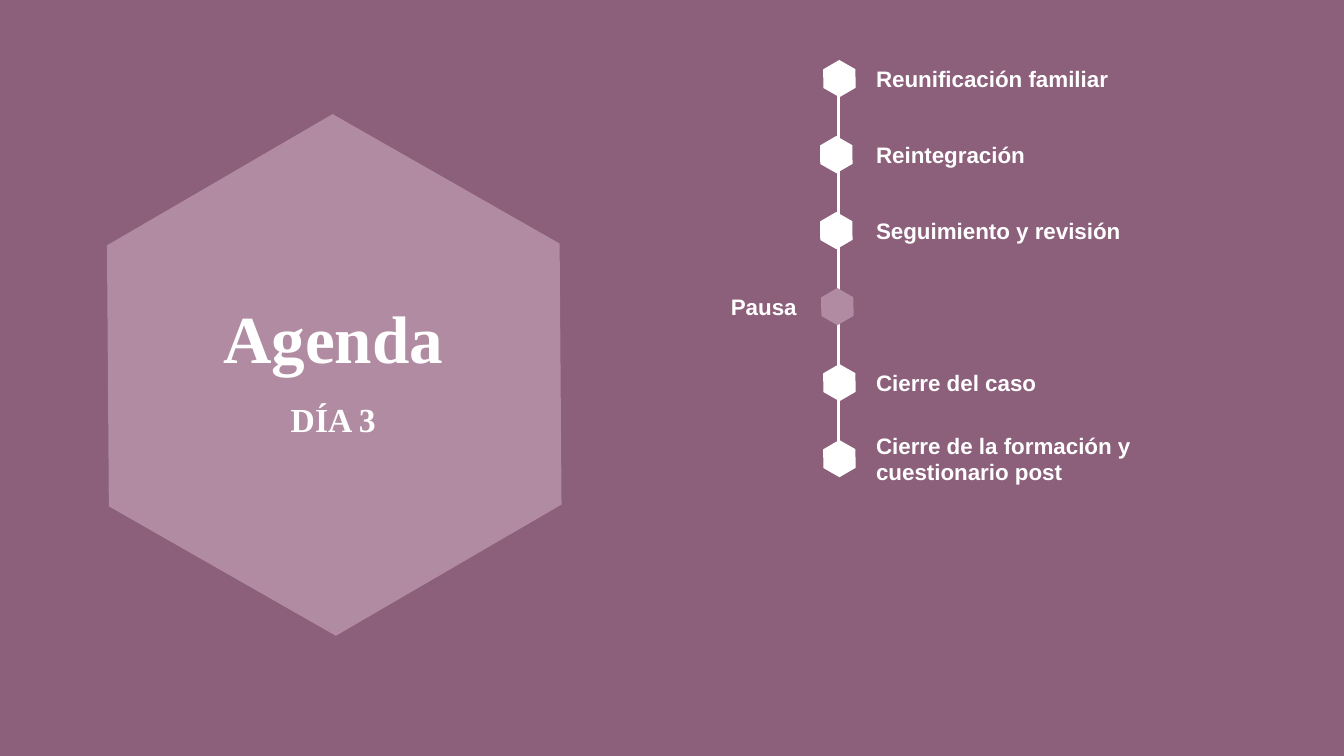
"""Build the day 3 agenda slide with a vertical timeline."""
from pptx import Presentation
from pptx.dml.color import RGBColor
from pptx.enum.shapes import MSO_CONNECTOR, MSO_SHAPE
from pptx.enum.text import MSO_ANCHOR, PP_ALIGN
from pptx.oxml.ns import qn
from pptx.util import Inches, Pt
from lxml import etree

TITLE = [("Agenda", 48, 0), ("DÍA 3", 24, 18)]
STOPS = [
    ("Reunificación familiar", 8.14, False),
    ("Reintegración", 8.11, False),
    ("Seguimiento y revisión", 8.11, False),
    ("Pausa", 8.12, True),
    ("Cierre del caso", 8.14, False),
    ("Cierre de la formación y cuestionario post", 8.14, False),
]
PLUM = RGBColor(0x8C, 0x5F, 0x7A)
MAUVE = RGBColor(0xB0, 0x8B, 0xA1)
WHITE = RGBColor(0xFF, 0xFF, 0xFF)

LINE_X, LINE_TOP = 8.32, 0.72
FIRST_Y, LAST_Y = 0.78, 4.55
PITCH = (LAST_Y - FIRST_Y) / (len(STOPS) - 1)
HEX_W, HEX_H = 0.37, 0.32


def add_hexagon(s, x, y, w, h, color):
    hexagon = s.shapes.add_shape(
        MSO_SHAPE.HEXAGON, Inches(x), Inches(y), Inches(w), Inches(h))
    hexagon.adjustments[0] = 0.29
    hexagon.rotation = 29.7
    hexagon.shadow.inherit = False
    hexagon.fill.solid()
    hexagon.fill.fore_color.rgb = color
    hexagon.line.fill.background()
    return hexagon


def style(p, font, size, align):
    p.alignment = align
    p.font.name = font
    p.font.size = Pt(size)
    p.font.bold = True
    p.font.color.rgb = WHITE


def add_label(s, text, x, center_y, w, align):
    h = 0.64 if len(text) > 30 else 0.37
    box = s.shapes.add_textbox(
        Inches(x), Inches(center_y - h / 2), Inches(w), Inches(h))
    tf = box.text_frame
    tf.word_wrap = True
    tf.vertical_anchor = MSO_ANCHOR.MIDDLE
    tf.text = text
    style(tf.paragraphs[0], "Arial", 16, align)


def add_title(s):
    title = s.shapes.title
    title.left, title.top = Inches(1.11), Inches(3.39)
    title.width, title.height = Inches(4.39), Inches(0.61)
    tf = title.text_frame
    tf.vertical_anchor = MSO_ANCHOR.MIDDLE
    tf.text = "\n".join(text for text, _, _ in TITLE)
    for p, (_, size, gap) in zip(tf.paragraphs, TITLE):
        style(p, "Times New Roman", size, PP_ALIGN.CENTER)
        p.line_spacing = 0.9
        p.space_before = Pt(gap)


def add_timeline(s):
    line = s.shapes.add_connector(
        MSO_CONNECTOR.STRAIGHT, Inches(LINE_X), Inches(LINE_TOP),
        Inches(LINE_X), Inches(LAST_Y))
    line.line.color.rgb = WHITE
    line.line.width = Pt(2.25)
    etree.SubElement(line._element.spPr, qn("a:effectLst"))
    for i, (text, x, is_break) in enumerate(STOPS):
        y = FIRST_Y + i * PITCH
        add_hexagon(s, x, y - HEX_H / 2, HEX_W, HEX_H,
                    MAUVE if is_break else WHITE)
        if is_break:
            add_label(s, text, 6.52, y, 1.48, PP_ALIGN.RIGHT)
        else:
            add_label(s, text, 8.59, y, 3.92, PP_ALIGN.LEFT)


def main():
    prs = Presentation()
    prs.slide_width, prs.slide_height = Inches(13.33), Inches(7.5)
    s = prs.slides.add_slide(prs.slide_layouts[5])
    s.background.fill.solid()
    s.background.fill.fore_color.rgb = PLUM
    hexagon = add_hexagon(s, 0.72, 1.48, 5.19, 4.48, MAUVE)
    s.shapes.title._element.addprevious(hexagon._element)
    add_title(s)
    add_timeline(s)
    prs.save("out.pptx")


if __name__ == "__main__":
    main()
